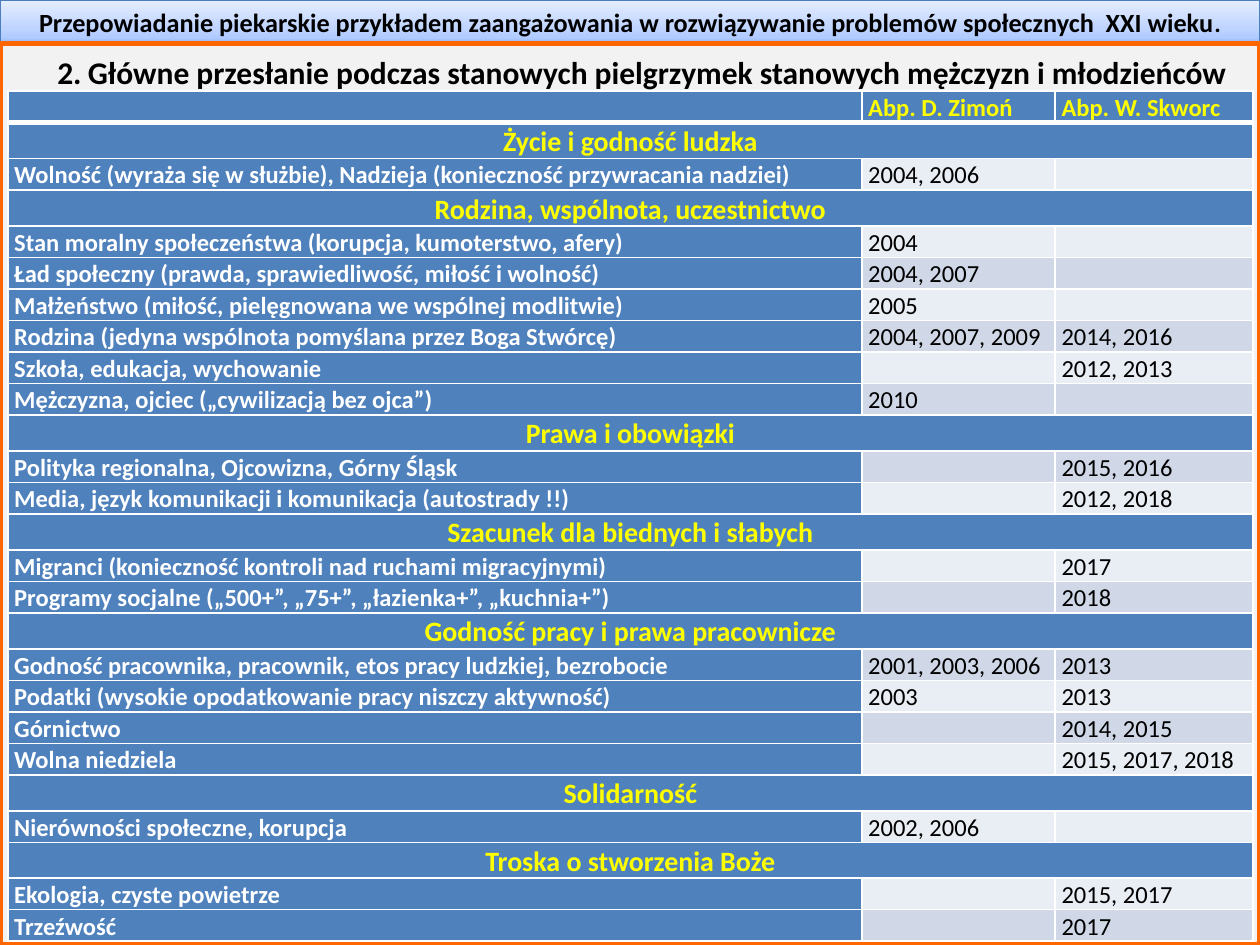
from lxml import etree
from pptx import Presentation
from pptx.dml.color import RGBColor
from pptx.enum.shapes import MSO_SHAPE
from pptx.enum.text import MSO_ANCHOR, PP_ALIGN
from pptx.oxml import parse_xml
from pptx.oxml.ns import qn
from pptx.util import Pt

RECTANGLE = MSO_SHAPE.RECTANGLE
TOP, MIDDLE = MSO_ANCHOR.TOP, MSO_ANCHOR.MIDDLE
LEFT, CENTER = PP_ALIGN.LEFT, PP_ALIGN.CENTER
FONT = "Calibri"
NS = 'xmlns:a="http://schemas.openxmlformats.org/drawingml/2006/main"'
COLORS = {
    "text": "000000", "white": "FFFFFF", "yellow": "FFFF00",
    "blue": "4F81BD", "light": "E9EDF4", "dark": "D0D8E8",
    "panel": "F2F2F2", "orange": "FF6600", "banner_line": "4B7EBC",
}
BANNER_STOPS = [(0, "A4C4FF"), (35, "BFD4FF"), (100, "E6EEFF")]
COLUMN_WIDTHS = [488, 110.5, 113]
ROW_HEIGHT = 15.3
BISHOPS = ["Abp. D. Zimoń", "Abp. W. Skworc"]
SECTIONS = [
    ("Życie i godność ludzka", [
        ("Wolność (wyraża się w służbie), Nadzieja (konieczność przywracania nadziei)",
         "2004, 2006", ""),
    ]),
    ("Rodzina, wspólnota, uczestnictwo", [
        ("Stan moralny społeczeństwa (korupcja, kumoterstwo, afery)", "2004", ""),
        ("Ład społeczny (prawda, sprawiedliwość, miłość i wolność)", "2004, 2007", ""),
        ("Małżeństwo (miłość, pielęgnowana we wspólnej modlitwie)", "2005", ""),
        ("Rodzina (jedyna wspólnota pomyślana przez Boga Stwórcę)",
         "2004, 2007, 2009", "2014, 2016"),
        ("Szkoła, edukacja, wychowanie", "", "2012, 2013"),
        ("Mężczyzna, ojciec („cywilizacją bez ojca”)", "2010", ""),
    ]),
    ("Prawa i obowiązki", [
        ("Polityka regionalna, Ojcowizna, Górny Śląsk", "", "2015, 2016"),
        ("Media, język komunikacji i komunikacja (autostrady !!)", "", "2012, 2018"),
    ]),
    ("Szacunek dla biednych i słabych", [
        ("Migranci (konieczność kontroli nad ruchami migracyjnymi)", "", "2017"),
        ("Programy socjalne („500+”, „75+”, „łazienka+”, „kuchnia+”)", "", "2018"),
    ]),
    ("Godność pracy i prawa pracownicze", [
        ("Godność pracownika, pracownik, etos pracy ludzkiej, bezrobocie",
         "2001, 2003, 2006", "2013"),
        ("Podatki (wysokie opodatkowanie pracy niszczy aktywność)", "2003", "2013"),
        ("Górnictwo", "", "2014, 2015"),
        ("Wolna niedziela", "", "2015, 2017, 2018"),
    ]),
    ("Solidarność", [
        ("Nierówności społeczne, korupcja", "2002, 2006", ""),
    ]),
    ("Troska o stworzenia Boże", [
        ("Ekologia, czyste powietrze", "", "2015, 2017"),
        ("Trzeźwość", "", "2017"),
    ]),
]


def rgb(name):
    return RGBColor.from_string(COLORS[name])


def write(paragraph, text, size=14, color="text", bold=False, align=LEFT, spacing=None):
    paragraph.alignment = align
    if spacing:
        paragraph.line_spacing = spacing
    run = paragraph.add_run()
    run.text = text
    run.font.name = FONT
    run.font.size = Pt(size)
    run.font.bold = bold
    run.font.color.rgb = rgb(color)


def add_panel(slide, top, height, line, line_width):
    panel = slide.shapes.add_shape(RECTANGLE, 0, Pt(top), Pt(720), Pt(height))
    panel.line.color.rgb = rgb(line)
    panel.line.width = Pt(line_width)
    panel.shadow.inherit = False
    effects = panel.element.spPr.find(qn("a:effectLst"))
    effects.append(parse_xml(
        f'<a:outerShdw {NS} blurRad="40000" dist="20000" dir="5400000" rotWithShape="0">'
        '<a:srgbClr val="000000"><a:alpha val="38000"/></a:srgbClr></a:outerShdw>'))
    return panel


def fill_with_gradient(panel, stops):
    stop_list = "".join(
        f'<a:gs pos="{position * 1000}"><a:srgbClr val="{color}"/></a:gs>'
        for position, color in stops)
    panel.element.spPr.find(qn("a:prstGeom")).addnext(parse_xml(
        f'<a:gradFill {NS} rotWithShape="1"><a:gsLst>{stop_list}</a:gsLst>'
        '<a:lin ang="16200000" scaled="0"/></a:gradFill>'))


def add_banner(slide):
    banner = add_panel(slide, 0, 25, "banner_line", 0.75)
    fill_with_gradient(banner, BANNER_STOPS)
    banner.text_frame.vertical_anchor = MIDDLE
    topic = banner.text_frame.paragraphs[0]
    write(topic, "Przepowiadanie piekarskie przykładem zaangażowania "
          "w rozwiązywanie problemów społecznych  XXI wieku",
          size=15, bold=True, align=CENTER)
    write(topic, ".", size=14, bold=True, align=CENTER)


def add_heading(slide):
    box = slide.shapes.add_textbox(0, Pt(26.8), Pt(734), Pt(51))
    box.text_frame.word_wrap = True
    heading = box.text_frame.paragraphs[0]
    write(heading, "2.", size=18, bold=True, align=CENTER)
    write(heading, " ", size=16, align=CENTER)
    write(heading, "Główne przesłanie podczas stanowych pielgrzymek "
          "stanowych mężczyzn i młodzieńców", size=18, bold=True, align=CENTER)


def add_border(cell, side, width):
    cell._tc.get_or_add_tcPr().append(parse_xml(
        f'<a:ln{side} {NS} w="{Pt(width)}"><a:solidFill>'
        f'<a:srgbClr val="{COLORS["white"]}"/></a:solidFill></a:ln{side}>'))


def fill_cell(cell, text, fill, top=1, bottom=1, anchor=MIDDLE, **text_format):
    for side, width in (("L", 1), ("R", 1), ("T", top), ("B", bottom)):
        add_border(cell, side, width)
    cell.fill.solid()
    cell.fill.fore_color.rgb = rgb(fill)
    cell.margin_left = cell.margin_right = Pt(3.6)
    cell.margin_top = cell.margin_bottom = 0
    cell.vertical_anchor = anchor
    paragraph = cell.text_frame.paragraphs[0]
    if text:
        write(paragraph, text, spacing=1.07, **text_format)
    else:
        etree.SubElement(paragraph._p, qn("a:endParaRPr"), sz="1400")


def add_section_row(table, row, title):
    edge = 3 if row == 1 else 1
    for column, text in enumerate([title, "", ""]):
        fill_cell(table.cell(row, column), text, "blue", top=edge,
                  size=16, color="yellow", bold=True, align=CENTER)
    table.cell(row, 0).merge(table.cell(row, 2))


def add_theme_row(table, row, theme, *years):
    fill_cell(table.cell(row, 0), theme, "blue", color="white", bold=True)
    band = "dark" if row % 2 else "light"
    for column, dates in enumerate(years, start=1):
        fill_cell(table.cell(row, column), dates, band)


def add_themes_table(slide):
    row_count = 1 + sum(1 + len(themes) for _, themes in SECTIONS)
    table = slide.shapes.add_table(
        row_count, len(COLUMN_WIDTHS), Pt(4.5), Pt(52),
        Pt(sum(COLUMN_WIDTHS)), Pt(ROW_HEIGHT * row_count)).table
    for column, width in zip(table.columns, COLUMN_WIDTHS):
        column.width = Pt(width)
    for table_row in table.rows:
        table_row.height = Pt(ROW_HEIGHT)
    for column, bishop in enumerate(["", *BISHOPS]):
        fill_cell(table.cell(0, column), bishop, "blue", bottom=3, anchor=TOP,
                  color="yellow", bold=True)
    row = 1
    for title, themes in SECTIONS:
        add_section_row(table, row, title)
        for offset, theme in enumerate(themes, start=1):
            add_theme_row(table, row + offset, *theme)
        row += 1 + len(themes)


def main():
    presentation = Presentation()
    presentation.slide_width, presentation.slide_height = Pt(720), Pt(540)
    slide = presentation.slides.add_slide(presentation.slide_layouts[6])
    add_banner(slide)
    background = add_panel(slide, 25, 515, "orange", 3)
    background.fill.solid()
    background.fill.fore_color.rgb = rgb("panel")
    add_heading(slide)
    add_themes_table(slide)
    presentation.save("out.pptx")


if __name__ == "__main__":
    main()
